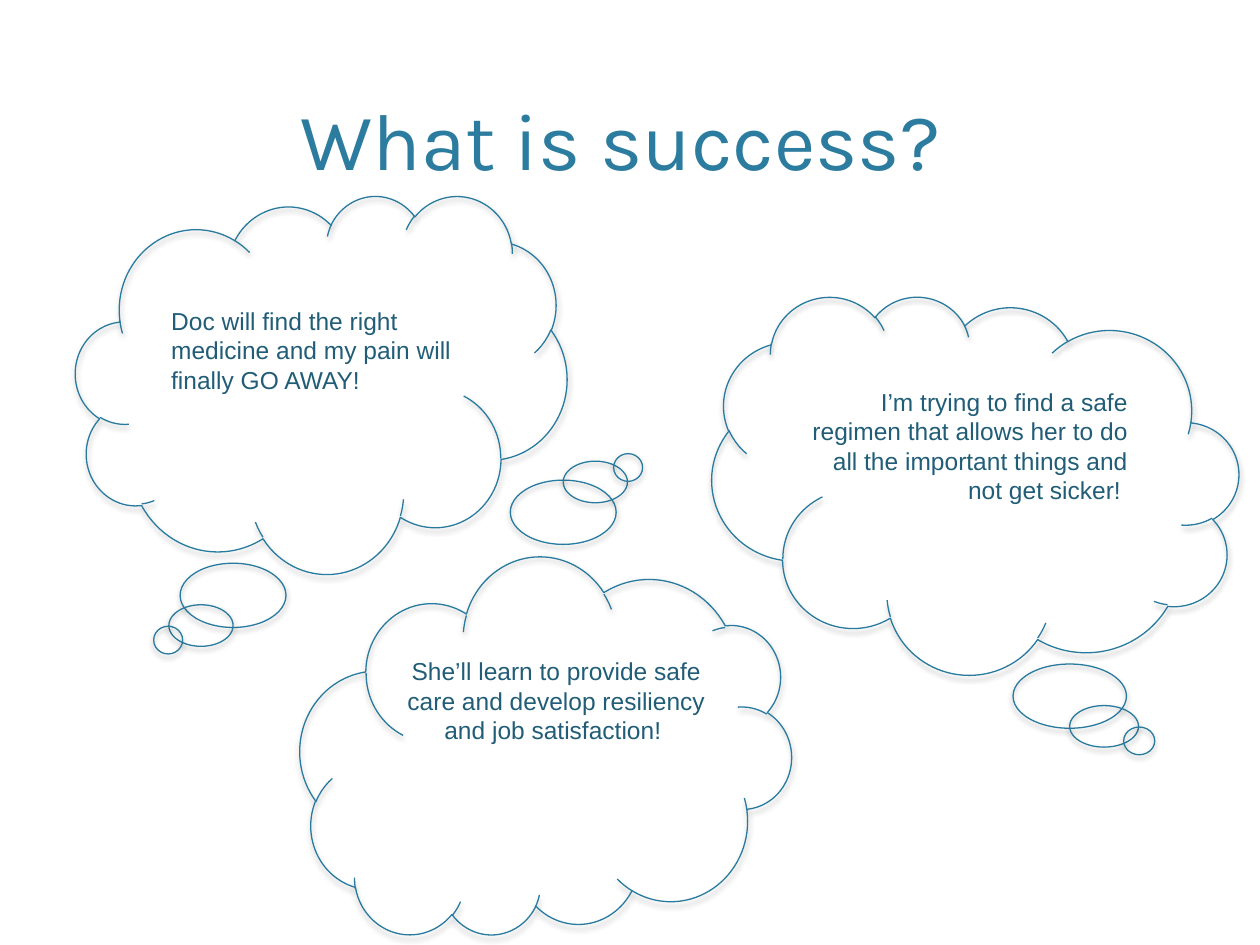
import pptx
import pptx.util
import pptx.dml.color
import pptx.enum.shapes
import pptx.enum.text
import lxml.etree
from dataclasses import dataclass

SHAPE = pptx.enum.shapes.MSO_SHAPE
ALIGN = pptx.enum.text.PP_ALIGN
ANCHOR = pptx.enum.text.MSO_ANCHOR
A = "http://schemas.openxmlformats.org/drawingml/2006/main"


@dataclass(frozen=True)
class Theme:
    outline: str = "287A9E"
    title: str = "2C7C9F"
    body: str = "215D77"
    shadow: str = "000000"
    title_font: str = "Karla"
    body_font: str = "Arial"
    title_size: int = 46
    body_size: int = 14
    line_width: float = 0.75


THEME = Theme()
SLIDE = (10, 7.5)
TITLE = ("What is success? ", (0.6, 0.12, 8.8, 1.46))

CLOUD = (3.9, 3)
BUBBLES = [(0.83, 2.92, 0.84, 0.51), (0.74, 3.25, 0.51, 0.33), (0.62, 3.42, 0.23, 0.22)]

THOUGHTS = [
    dict(text="Doc will find the right medicine and my pain will finally GO AWAY!",
         box=(1.26, 2.38, 2.59, 1.31), align=ALIGN.LEFT,
         cloud=(0.6, 1.55), width=3.9, turn="none", shift=(0, 0)),
    dict(text="I’m trying to find a safe regimen that allows her to do all the "
              "important things and not get sicker! ",
         box=(6.29, 3.02, 2.76, 1.62), align=ALIGN.RIGHT,
         cloud=(5.65, 2.35), width=4.18, turn="mirror", shift=(0, 0)),
    dict(text="She’ll learn to provide safe care and develop resiliency and job satisfaction! ",
         box=(3.12, 5.16, 2.59, 1.62), align=ALIGN.CENTER,
         cloud=(2.38, 4.43), width=3.9, turn="rotate", shift=(0.56, 0.19)),
]


def rgb(value):
    return pptx.dml.color.RGBColor.from_string(value)


def inches(box):
    return [pptx.util.Inches(v) for v in box]


def add_shadow(sp):
    sp.shadow.inherit = False
    effects = sp._element.spPr.find(f"{{{A}}}effectLst")
    outer = lxml.etree.SubElement(
        effects, f"{{{A}}}outerShdw", blurRad=str(pptx.util.Pt(3.1)),
        dist=str(pptx.util.Pt(1.8)), dir="5400000", rotWithShape="0")
    color = lxml.etree.SubElement(outer, f"{{{A}}}srgbClr", val=THEME.shadow)
    lxml.etree.SubElement(color, f"{{{A}}}alpha", val="35000")


def add_outline(group, kind, box, turn):
    sp = group.shapes.add_shape(kind, *inches(box))
    sp.fill.background()
    sp.line.color.rgb = rgb(THEME.outline)
    sp.line.width = pptx.util.Pt(THEME.line_width)
    add_shadow(sp)
    if turn == "mirror":
        sp._element.spPr.find(f"{{{A}}}xfrm").set("flipH", "1")
    elif turn == "rotate":
        sp.rotation = 180


def add_thought(s, thought):
    left, top = thought["cloud"]
    width, height = thought["width"], CLOUD[1]
    turn = thought["turn"]
    dx, dy = thought["shift"]
    scale = width / CLOUD[0]
    group = s.shapes.add_group_shape()
    add_outline(group, SHAPE.CLOUD, (left, top, width, height), turn)
    for x, y, w, h in BUBBLES:
        x, y, w = x * scale + dx, y + dy, w * scale
        if turn != "none":
            x = width - x - w
        if turn == "rotate":
            y = height - y - h
        add_outline(group, SHAPE.OVAL, (left + x, top + y, w, h), turn)


def add_text(s, text, box, align, font, size, color):
    tf = s.shapes.add_textbox(*inches(box)).text_frame
    tf.word_wrap = True
    p = tf.paragraphs[0]
    p.alignment = align
    r = p.add_run()
    r.text = text
    r.font.name = font
    r.font.size = pptx.util.Pt(size)
    r.font.color.rgb = rgb(color)
    return tf


def main():
    prs = pptx.Presentation()
    prs.slide_width, prs.slide_height = inches(SLIDE)
    s = prs.slides.add_slide(prs.slide_layouts[6])

    tf = add_text(s, *TITLE, ALIGN.CENTER, THEME.title_font, THEME.title_size, THEME.title)
    tf.vertical_anchor = ANCHOR.BOTTOM
    tf.margin_top = tf.margin_bottom = pptx.util.Inches(0.1)

    for thought in THOUGHTS:
        add_thought(s, thought)
        add_text(s, thought["text"], thought["box"], thought["align"],
                 THEME.body_font, THEME.body_size, THEME.body)

    prs.save("out.pptx")


if __name__ == "__main__":
    main()
